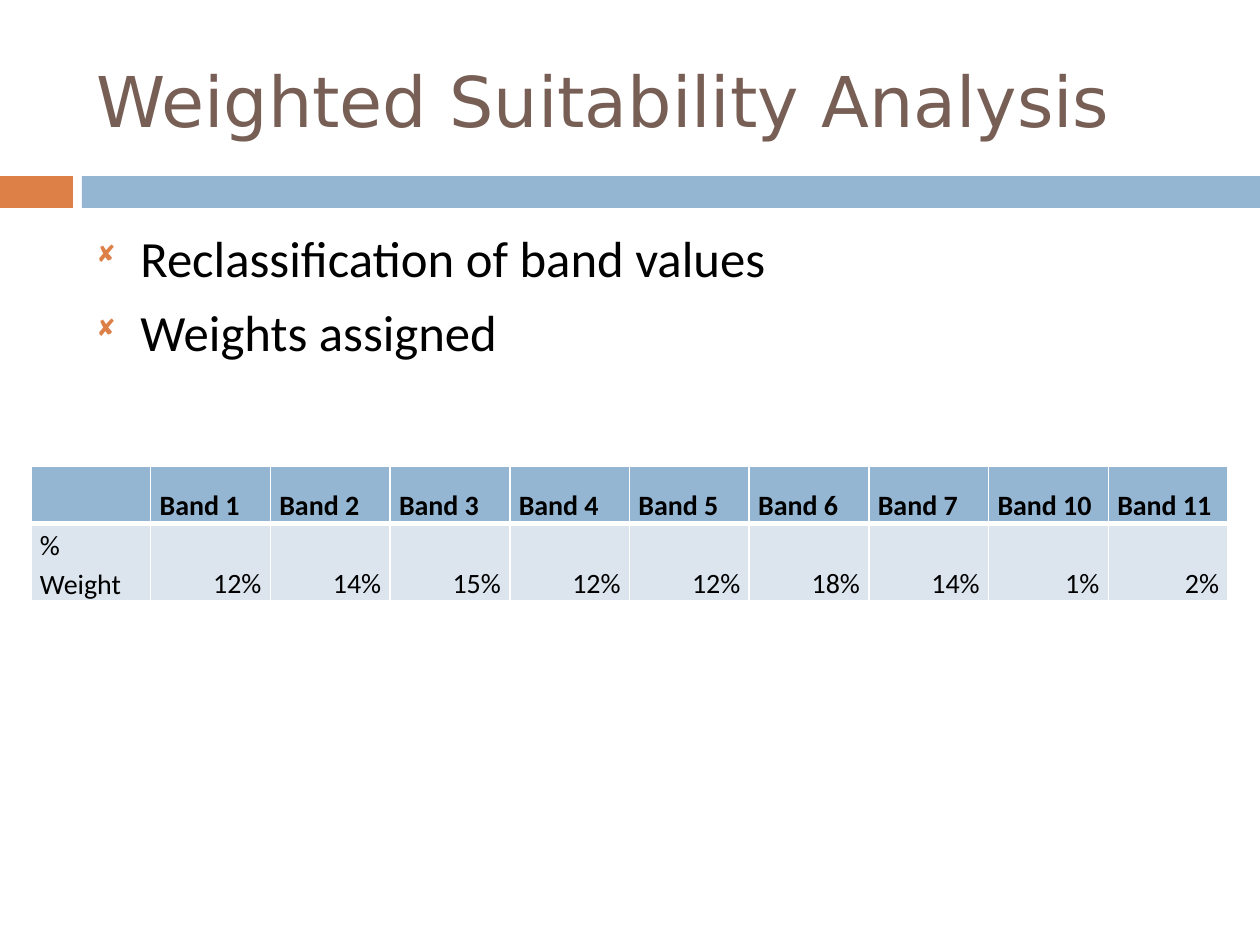
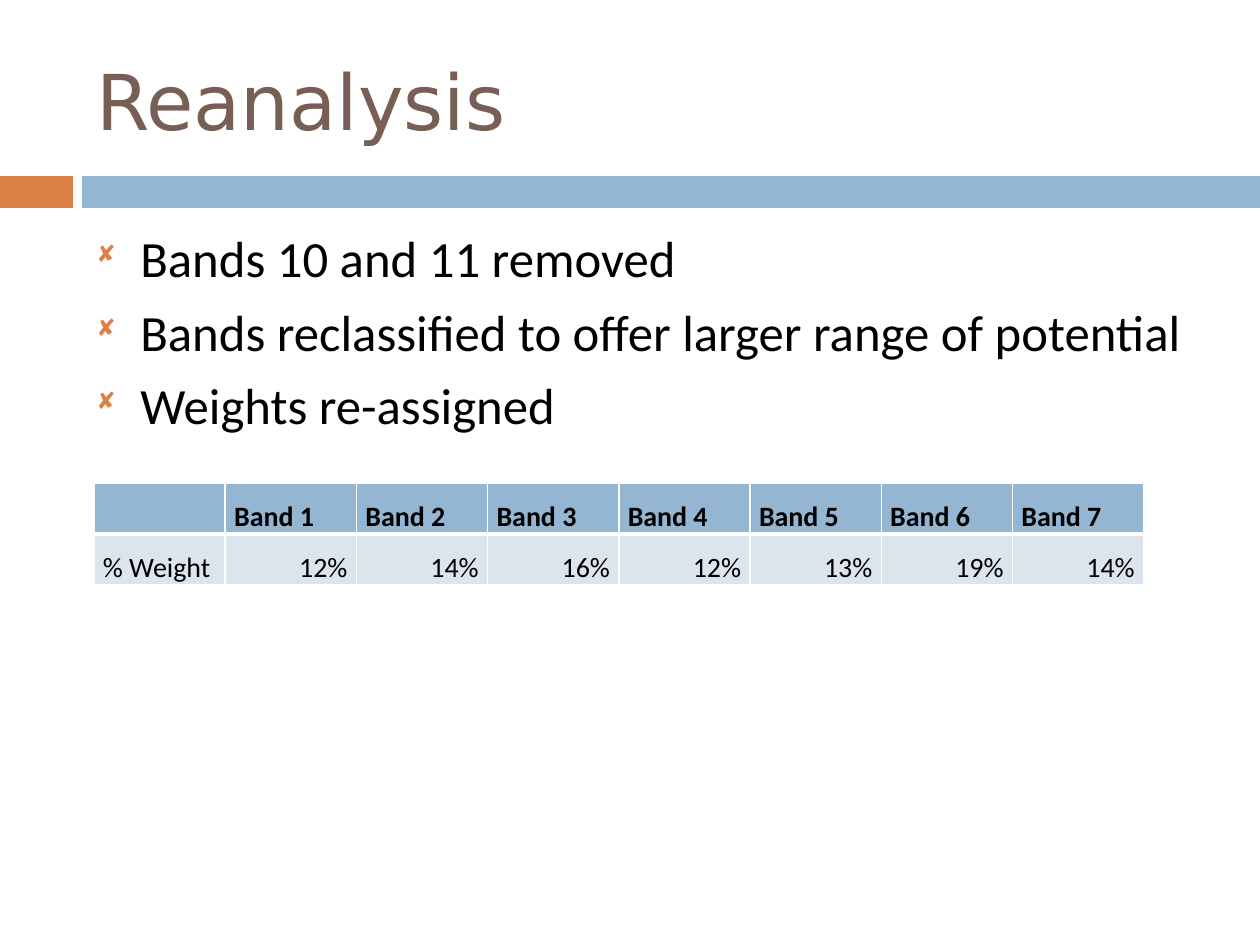
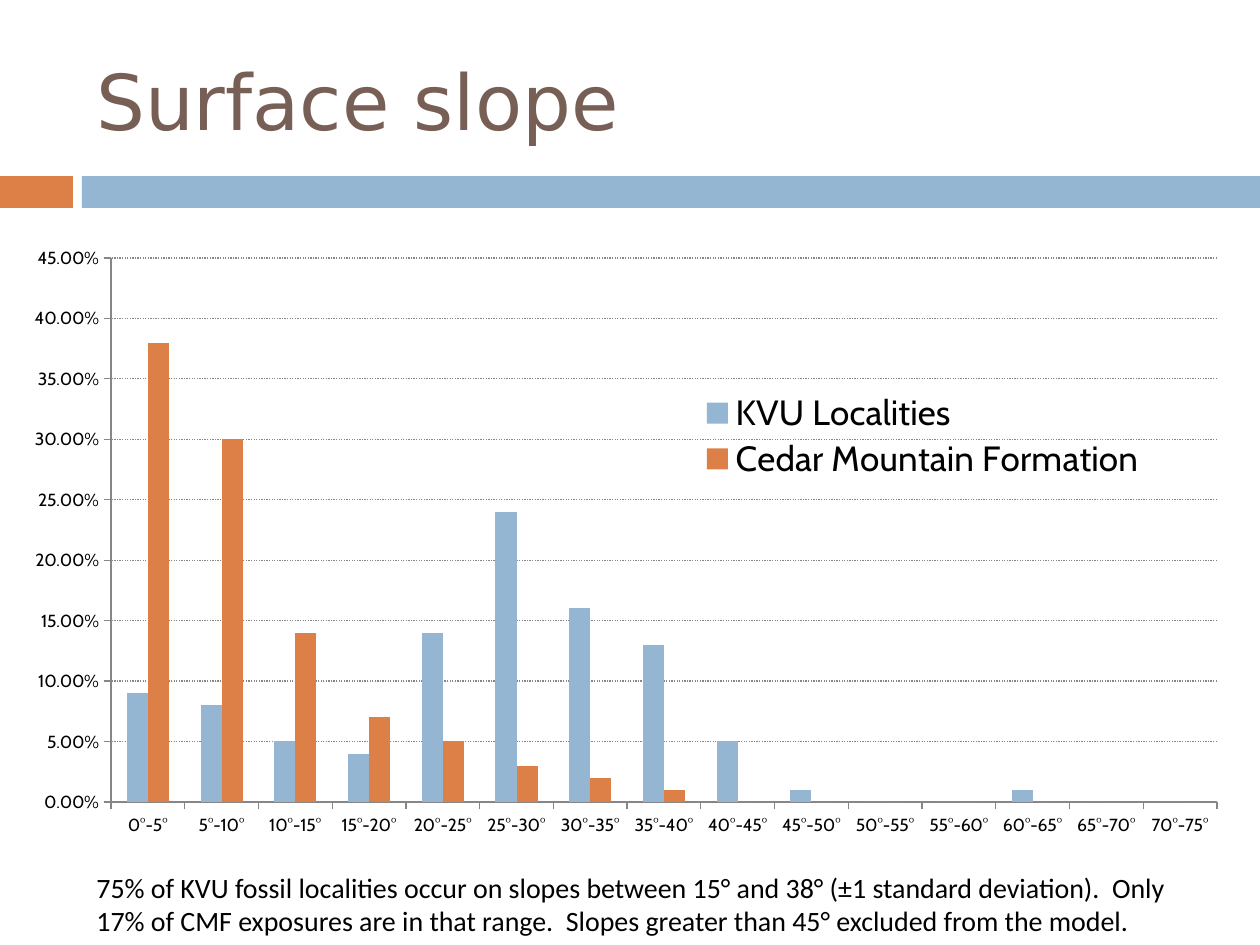
from dataclasses import dataclass

from lxml.etree import SubElement
from pptx import Presentation
from pptx.chart.data import CategoryChartData
from pptx.dml.color import RGBColor
from pptx.enum.chart import XL_CHART_TYPE, XL_LEGEND_POSITION, XL_TICK_MARK
from pptx.enum.dml import MSO_LINE
from pptx.enum.shapes import MSO_SHAPE
from pptx.enum.text import MSO_ANCHOR, PP_ALIGN
from pptx.oxml import parse_xml
from pptx.oxml.ns import nsdecls, qn
from pptx.util import Pt


@dataclass(frozen=True)
class Theme:
    blue: str = "94B6D2"
    orange: str = "DD8047"
    brown: str = "775F55"
    pale: str = "DCE5EE"
    white: str = "FFFFFF"
    black: str = "000000"
    grey: str = "868686"
    head: str = "DejaVu Sans"
    text: str = "Calibri"
    plot: str = "Cabin"
    mark: str = "Wingdings"
    title: int = 44
    body: int = 29
    note: int = 16
    key: int = 20
    tick: int = 10


THEME = Theme()
SIZE = (1260, 945)
TITLE = (84, 32, 1124, 136)
BODY = (84, 221, 1124, 620)
BAND_TOP, BAND_HIGH = 176, 32
INDENT = 44
INSET = 9


def px(count):
    return round(count * 914400 / 126)


def rgb(code):
    return RGBColor.from_string(code)


def style(font, face, size, color, bold=False):
    font.name, font.size, font.bold = face, Pt(size), bold
    font.color.rgb = rgb(color)


# Shared parts

def add_text(slide, box, lines, face, size, color):
    frame = slide.shapes.add_textbox(*map(px, box)).text_frame
    frame.word_wrap = True
    frame.text = "\n".join(lines)
    for para in frame.paragraphs:
        for run in para.runs:
            style(run.font, face, size, color)
    return frame


def add_base(deck, title, size=THEME.title):
    slide = deck.slides.add_slide(deck.slide_layouts[6])
    for left, wide, color in ((0, 73, THEME.orange), (82, 1178, THEME.blue)):
        band = slide.shapes.add_shape(
            MSO_SHAPE.RECTANGLE, *map(px, (left, BAND_TOP, wide, BAND_HIGH)))
        band.shadow.inherit = False
        band.fill.solid()
        band.fill.fore_color.rgb = rgb(color)
        band.line.fill.background()
    frame = add_text(slide, TITLE, [title], THEME.head, size, THEME.brown)
    frame.vertical_anchor = MSO_ANCHOR.MIDDLE
    return slide


def add_list(slide, box, lines):
    frame = add_text(slide, box, lines, THEME.text, THEME.body, THEME.black)
    for para in frame.paragraphs:
        para.space_before = Pt(7)
        props = para._p.get_or_add_pPr()
        props.set("marL", str(px(INDENT)))
        props.set("indent", str(-px(INDENT)))
        tint = SubElement(props, qn("a:buClr"))
        SubElement(tint, qn("a:srgbClr"), val=THEME.orange)
        SubElement(props, qn("a:buSzPct"), val="60000")
        SubElement(props, qn("a:buFont"), typeface=THEME.mark)
        SubElement(props, qn("a:buChar"), char="◻")


# Table of weights

def set_edges(cell, widths):
    props = cell._tc.get_or_add_tcPr()
    for spot, (side, width) in enumerate(zip("LRTB", widths)):
        props.insert(spot, parse_xml(
            f'<a:ln{side} {nsdecls("a")} w="{Pt(width)}"><a:solidFill>'
            f'<a:srgbClr val="{THEME.white}"/></a:solidFill></a:ln{side}>'))


def add_weights(slide, box, bands, weights):
    rows = [["", *(f"Band {band}" for band in bands)],
            ["% Weight", *(f"{weight}%" for weight in weights)]]
    table = slide.shapes.add_table(2, len(rows[0]), *map(px, box)).table
    table.horz_banding = False
    for col in table.columns:
        col.width = px(box[2]) // len(rows[0])
    for r, row in enumerate(rows):
        for c, word in enumerate(row):
            cell = table.cell(r, c)
            cell.text = word
            cell.vertical_anchor = MSO_ANCHOR.BOTTOM
            cell.margin_left = cell.margin_right = px(INSET)
            cell.margin_top = cell.margin_bottom = 0
            cell.fill.solid()
            cell.fill.fore_color.rgb = rgb(THEME.pale if r else THEME.blue)
            set_edges(cell, (1, 1, 3, 1) if r else (1, 1, 1, 3))
            para = cell.text_frame.paragraphs[0]
            para.line_spacing = 1.15
            para.alignment = PP_ALIGN.RIGHT if r and c else PP_ALIGN.LEFT
            for item in (para, *para.runs):
                style(item.font, THEME.text, THEME.note, THEME.black, r == 0)


# Chart of slopes

def set_layout(part, box, spot, inner=False):
    old = part.find(qn("c:layout"))
    if old is not None:
        part.remove(old)
    target = '<c:layoutTarget val="inner"/>' if inner else ""
    modes = "".join(f'<c:{k}Mode val="edge"/>' for k in "xy")
    sizes = "".join(f'<c:{k} val="{length / whole}"/>'
                    for k, length, whole in zip("xywh", spot, box[2:] * 2))
    node = parse_xml(f'<c:layout {nsdecls("c")}><c:manualLayout>{target}'
                     f'{modes}{sizes}</c:manualLayout></c:layout>')
    if inner:
        part.insert(0, node)
    else:
        part.find(qn("c:legendPos")).addnext(node)


def add_slopes(slide, box, series):
    data = CategoryChartData(number_format="0.00%")
    lows = range(0, 75, 5)
    data.categories = [f"{low}°-{low + 5}°" for low in lows]
    for name, shares in series.items():
        filled = shares + [0] * (len(lows) - len(shares))
        data.add_series(name, [share / 100 for share in filled])
    chart = slide.shapes.add_chart(
        XL_CHART_TYPE.COLUMN_CLUSTERED, *map(px, box), data).chart
    style(chart.font, THEME.plot, THEME.tick, THEME.black)
    chart.has_title = False

    plot = chart.plots[0]
    plot.vary_by_categories = False
    plot.gap_width, plot.overlap = 150, 0
    for bars, color in zip(plot.series, (THEME.blue, THEME.orange)):
        bars.format.fill.solid()
        bars.format.fill.fore_color.rgb = rgb(color)

    for axis in (chart.category_axis, chart.value_axis):
        axis.major_tick_mark = XL_TICK_MARK.OUTSIDE
        axis.format.line.color.rgb = rgb(THEME.grey)
    scale = chart.value_axis
    scale.minimum_scale, scale.maximum_scale, scale.major_unit = 0, 0.45, 0.05
    scale.tick_labels.number_format = "0.00%"
    scale.tick_labels.number_format_is_linked = False
    grid = scale.major_gridlines.format.line
    grid.color.rgb = rgb(THEME.grey)
    grid.width = Pt(0.75)
    grid.dash_style = MSO_LINE.ROUND_DOT

    chart.has_legend = True
    legend = chart.legend
    legend.position = XL_LEGEND_POSITION.RIGHT
    legend.include_in_layout = False
    style(legend.font, THEME.plot, THEME.key, THEME.black)
    set_layout(legend._element, box, (690, 168, 466, 94))
    set_layout(plot._element.getparent(), box, (111, 37, 1106, 544), True)


# Slides

def add_points(deck, title, size, points, box, bands, weights):
    slide = add_base(deck, title, size)
    add_list(slide, BODY, points)
    add_weights(slide, box, bands, weights)


def add_survey(deck):
    slide = add_base(deck, "Surface slope")
    add_slopes(slide, (0, 221, 1260, 724), {
        "KVU Localities": [9, 8, 5, 4, 14, 24, 16, 13, 5, 1, 0, 0, 1],
        "Cedar Mountain Formation": [38, 30, 14, 7, 5, 3, 2, 1],
    })
    add_text(slide, (84, 864, 1113, 81), [
        "75% of KVU fossil localities occur on slopes between 15° and 38° "
        "(±1 standard deviation).  Only 17% of CMF exposures are in that "
        "range.  Slopes greater than 45° excluded from the model."],
        THEME.text, THEME.note, THEME.black)


def main():
    deck = Presentation()
    deck.slide_width, deck.slide_height = map(px, SIZE)
    add_points(deck, "Weighted Suitability Analysis", 40,
               ["Reclassification of band values", "Weights assigned"],
               (31, 466, 1197, 115), [*range(1, 8), 10, 11],
               [12, 14, 15, 12, 12, 18, 14, 1, 2])
    add_points(deck, "Reanalysis", THEME.title,
               ["Bands 10 and 11 removed",
                "Bands reclassified to offer larger range of potential",
                "Weights re-assigned"],
               (94, 483, 1050, 102), range(1, 8),
               [12, 14, 16, 12, 13, 19, 14])
    add_survey(deck)
    deck.save("out.pptx")


if __name__ == "__main__":
    main()
